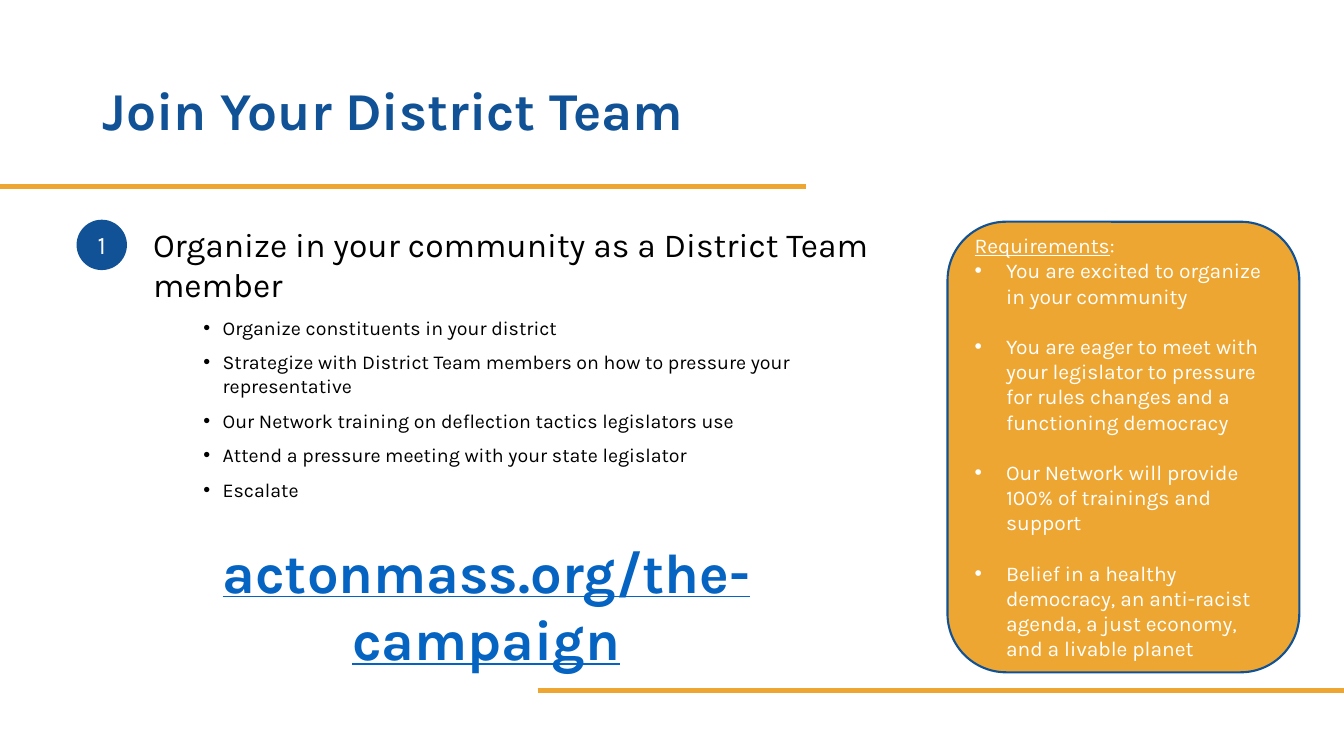
"""Build the slide that invites people to join their district team."""
from dataclasses import dataclass

from lxml.etree import SubElement
from pptx import Presentation
from pptx.dml.color import RGBColor
from pptx.enum.shapes import MSO_CONNECTOR, MSO_SHAPE
from pptx.enum.text import MSO_ANCHOR, MSO_AUTO_SIZE, PP_ALIGN
from pptx.oxml.ns import qn
from pptx.util import Pt


@dataclass(frozen=True)
class Theme:
    """Colours, typeface and type sizes of the slide."""
    blue: RGBColor = RGBColor(0x10, 0x52, 0x95)
    gold: RGBColor = RGBColor(0xED, 0xA6, 0x31)
    link: RGBColor = RGBColor(0x05, 0x63, 0xC1)
    black: RGBColor = RGBColor(0, 0, 0)
    white: RGBColor = RGBColor(0xFF, 0xFF, 0xFF)
    face: str = "Karla"
    title: Pt = Pt(38)
    address: Pt = Pt(40)
    heading: Pt = Pt(24)
    number: Pt = Pt(18)
    requirement: Pt = Pt(15)
    action: Pt = Pt(14)


theme = Theme()


def add_run(paragraph, text, color, **font_format):
    """Add a run of text in the theme typeface."""
    run = paragraph.add_run()
    run.text = text
    run.font.color.rgb = color
    for attribute, value in {"name": theme.face, **font_format}.items():
        setattr(run.font, attribute, value)


def add_bullet(frame, margin, hang, space_before):
    """Add a paragraph with a hanging bullet."""
    paragraph = frame.add_paragraph()
    paragraph.space_before = space_before
    properties = paragraph._p.get_or_add_pPr()
    properties.set("marL", str(margin))
    properties.set("indent", str(-hang))
    SubElement(properties, qn("a:buFont"), typeface="Arial")
    SubElement(properties, qn("a:buChar"), char="•")
    return paragraph


presentation = Presentation()
presentation.slide_width, presentation.slide_height = Pt(960), Pt(540)
slide = presentation.slides.add_slide(presentation.slide_layouts[5])
shapes = slide.shapes

for start, end, height in ((0, 576, 133.2), (384, 960, 493.2)):
    rule = shapes.add_connector(
        MSO_CONNECTOR.STRAIGHT, Pt(start), Pt(height), Pt(end), Pt(height))
    rule.line.color.rgb = theme.gold
    rule.line.width = Pt(3.25)
    SubElement(rule._element.spPr, qn("a:effectLst"))

title = shapes.title
title_place = {"left": Pt(66.24), "top": Pt(28.8), "width": Pt(699.12), "height": Pt(104.4)}
for attribute, value in title_place.items():
    setattr(title, attribute, value)
title_format = {"vertical_anchor": MSO_ANCHOR.MIDDLE, "word_wrap": True,
                "auto_size": MSO_AUTO_SIZE.NONE}
for attribute, value in title_format.items():
    setattr(title.text_frame, attribute, value)
title_line = title.text_frame.paragraphs[0]
title_line.alignment = PP_ALIGN.LEFT
title_line.line_spacing = 0.9
add_run(title_line, "Join Your District Team", theme.blue, size=theme.title, bold=True)

actions = shapes.add_textbox(Pt(66.24), Pt(156.24), Pt(581.76), Pt(258.48)).text_frame
actions.word_wrap = True
heading = actions.paragraphs[0]
heading._p.get_or_add_pPr().set("marL", str(Pt(36)))
add_run(heading, "Organize in your community as a District Team member",
        theme.black, size=theme.heading)
for action in (
    "Organize constituents in your district",
    "Strategize with District Team members on how to pressure your representative",
    "Our Network training on deflection tactics legislators use",
    "Attend a pressure meeting with your state legislator",
    "Escalate",
):
    bullet = add_bullet(actions, Pt(85.68), Pt(13.68), Pt(8))
    add_run(bullet, action, theme.black, size=theme.action)

badge = shapes.add_shape(MSO_SHAPE.OVAL, Pt(54.72), Pt(156.96), Pt(36), Pt(36))
badge.fill.solid()
badge.fill.fore_color.rgb = theme.blue
badge.line.fill.background()
badge_line = badge.text_frame.paragraphs[0]
badge_line.alignment = PP_ALIGN.CENTER
add_run(badge_line, "1", theme.white, size=theme.number)

panel = shapes.add_shape(
    MSO_SHAPE.ROUNDED_RECTANGLE, Pt(676.8), Pt(158.4), Pt(251.28), Pt(321.84))
panel.fill.solid()
panel.fill.fore_color.rgb = theme.gold
panel.line.color.rgb = theme.blue
panel.line.width = Pt(1.5)
for shape in (badge, panel):
    shape.shadow.inherit = False
    shape.text_frame.vertical_anchor = MSO_ANCHOR.MIDDLE

requirements = panel.text_frame
requirements.word_wrap = True
label = requirements.paragraphs[0]
add_run(label, "Requirements", theme.white, size=theme.requirement, underline=True)
add_run(label, ":", theme.white, size=theme.requirement)
for index, requirement in enumerate((
    "You are excited to organize in your community",
    "You are eager to meet with your legislator to pressure for rules changes "
    "and a functioning democracy",
    "Our Network will provide 100% of trainings and support",
    "Belief in a healthy democracy, an anti-racist agenda, a just economy, "
    "and a livable planet",
)):
    bullet = add_bullet(requirements, Pt(22.5), Pt(22.5), Pt(18 if index else 0))
    add_run(bullet, requirement, theme.white, size=theme.requirement)
for paragraph in requirements.paragraphs:
    paragraph.alignment = PP_ALIGN.LEFT

address = shapes.add_textbox(Pt(66.24), Pt(380.16), Pt(562.32), Pt(55.44)).text_frame
address.word_wrap = True
address_line = address.paragraphs[0]
address_line.alignment = PP_ALIGN.CENTER
add_run(address_line, "actonmass.org/the-campaign", theme.link,
        size=theme.address, bold=True, underline=True)

presentation.save("out.pptx")
